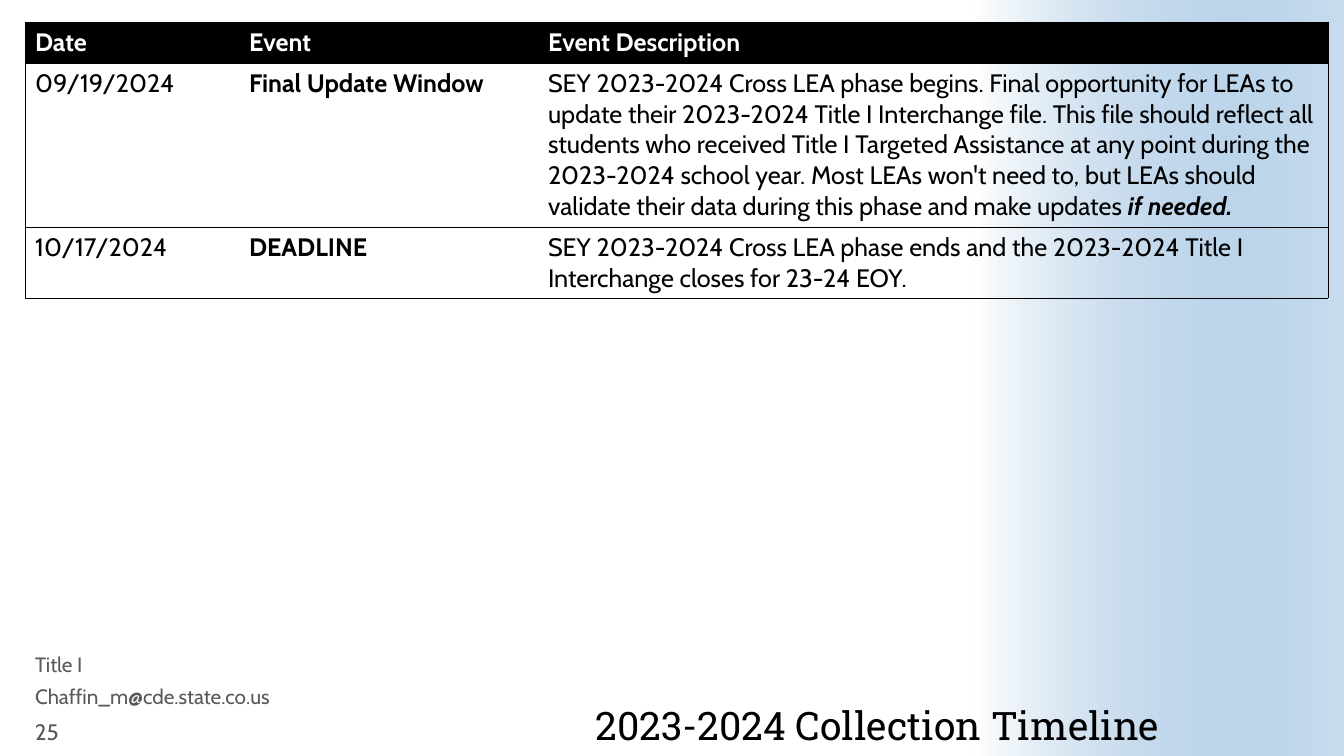
from lxml.etree import SubElement
from pptx import Presentation
from pptx.dml.color import RGBColor
from pptx.enum.shapes import MSO_SHAPE
from pptx.enum.text import MSO_ANCHOR, MSO_AUTO_SIZE, PP_ALIGN
from pptx.oxml.ns import qn
from pptx.util import Emu, Pt

COLORS = {"black": "000000", "white": "FFFFFF", "gray": "595959", "blue": "488BC9"}
SCALE = 914400 / 100.8


def px(*values):
    return [Emu(round(v * SCALE)) for v in values]


def style(font, size, color, name="Cabin", bold=False, italic=False):
    font.name, font.size = name, Pt(size)
    font.bold, font.italic = bold, italic
    font.color.rgb = RGBColor.from_string(COLORS[color])


prs = Presentation()
prs.slide_width, prs.slide_height = px(1344, 756)
s = prs.slides.add_slide(prs.slide_layouts[3])

band = s.shapes.add_shape(MSO_SHAPE.RECTANGLE, *px(975, 0, 369, 756))
band.shadow.inherit = False
band.line.fill.background()
band.fill.gradient()
band.fill.gradient_angle = 0
for stop, position, color in zip(band.fill.gradient_stops, (0, 1), ("white", "blue")):
    stop.position = position
    stop.color.rgb = RGBColor.from_string(COLORS[color])
blue_stop = list(band._element.iter(qn("a:srgbClr")))[1]
SubElement(blue_stop, qn("a:alpha"), val="30000")
s.shapes._spTree.insert(2, band._element)

title, *contacts = s.placeholders
title.left, title.top, title.width, title.height = px(429, 650, 730, 99)
tf = title.text_frame
tf.text = "2023-2024 Collection Timeline"
tf.auto_size = MSO_AUTO_SIZE.NONE
tf.vertical_anchor = MSO_ANCHOR.BOTTOM
tf.margin_left = tf.margin_top = tf.margin_right = tf.margin_bottom = 0
p = tf.paragraphs[0]
p.alignment = PP_ALIGN.RIGHT
p.line_spacing = 0.9
style(p.runs[0].font, 28, "black", "Roboto Slab")

for sp, text, top in zip(contacts, ("Title I", "Chaffin_m@cde.state.co.us"), (652, 684)):
    sp.left, sp.top, sp.width, sp.height = px(25, top, 392, 31)
    tf = sp.text_frame
    tf.text = text
    tf.auto_size = MSO_AUTO_SIZE.NONE
    p = tf.paragraphs[0]
    p.line_spacing = 0.8
    p.space_before = Pt(0)
    pPr = p._p.get_or_add_pPr()
    pPr.set("marL", "0")
    pPr.set("indent", "0")
    SubElement(pPr, qn("a:buNone"))
    style(p.runs[0].font, 14.8, "gray")

number = s.shapes.add_textbox(*px(25, 716, 86, 31))
tf = number.text_frame
tf.text = "25"
tf.word_wrap = True
tf.vertical_anchor = MSO_ANCHOR.MIDDLE
style(tf.paragraphs[0].runs[0].font, 16, "gray")

rows = [
    ["Date", "Event", "Event Description"],
    ["09/19/2024", "Final Update Window",
     "SEY 2023-2024 Cross LEA phase begins. Final opportunity for LEAs to update their "
     "2023-2024 Title I Interchange file. This file should reflect all students who received "
     "Title I Targeted Assistance at any point during the 2023-2024 school year. Most LEAs "
     "won't need to, but LEAs should validate their data during this phase and make updates "],
    ["10/17/2024", "DEADLINE",
     "SEY 2023-2024 Cross LEA phase ends and the 2023-2024 Title I Interchange closes "
     "for 23-24 EOY."],
]
table = s.shapes.add_table(3, 3, *px(25, 22, 1303, 276)).table
table.horz_banding = False
for column, width in zip(table.columns, px(214, 299, 790)):
    column.width = width
for row, height in zip(table.rows, px(41, 164, 71)):
    row.height = height

for i, row in enumerate(rows):
    for j, text in enumerate(row):
        cell = table.cell(i, j)
        cell.text = text
        bold = i == 0 or j == 1
        style(cell.text_frame.paragraphs[0].runs[0].font, 18, "black" if i else "white", bold=bold)
        tcPr = cell._tc.get_or_add_tcPr()
        for side, shown in (("L", j == 0), ("R", j == 2), ("T", True), ("B", True)):
            ln = SubElement(tcPr, qn(f"a:ln{side}"), w="6350")
            if shown:
                fill = SubElement(ln, qn("a:solidFill"))
                SubElement(fill, qn("a:srgbClr"), val=COLORS["black"])
            else:
                SubElement(ln, qn("a:noFill"))
        if i == 0:
            cell.fill.solid()
            cell.fill.fore_color.rgb = RGBColor.from_string(COLORS["black"])
        else:
            cell.fill.background()

r = table.cell(1, 2).text_frame.paragraphs[0].add_run()
r.text = "if needed."
style(r.font, 18, "black", bold=True, italic=True)

prs.save("out.pptx")
